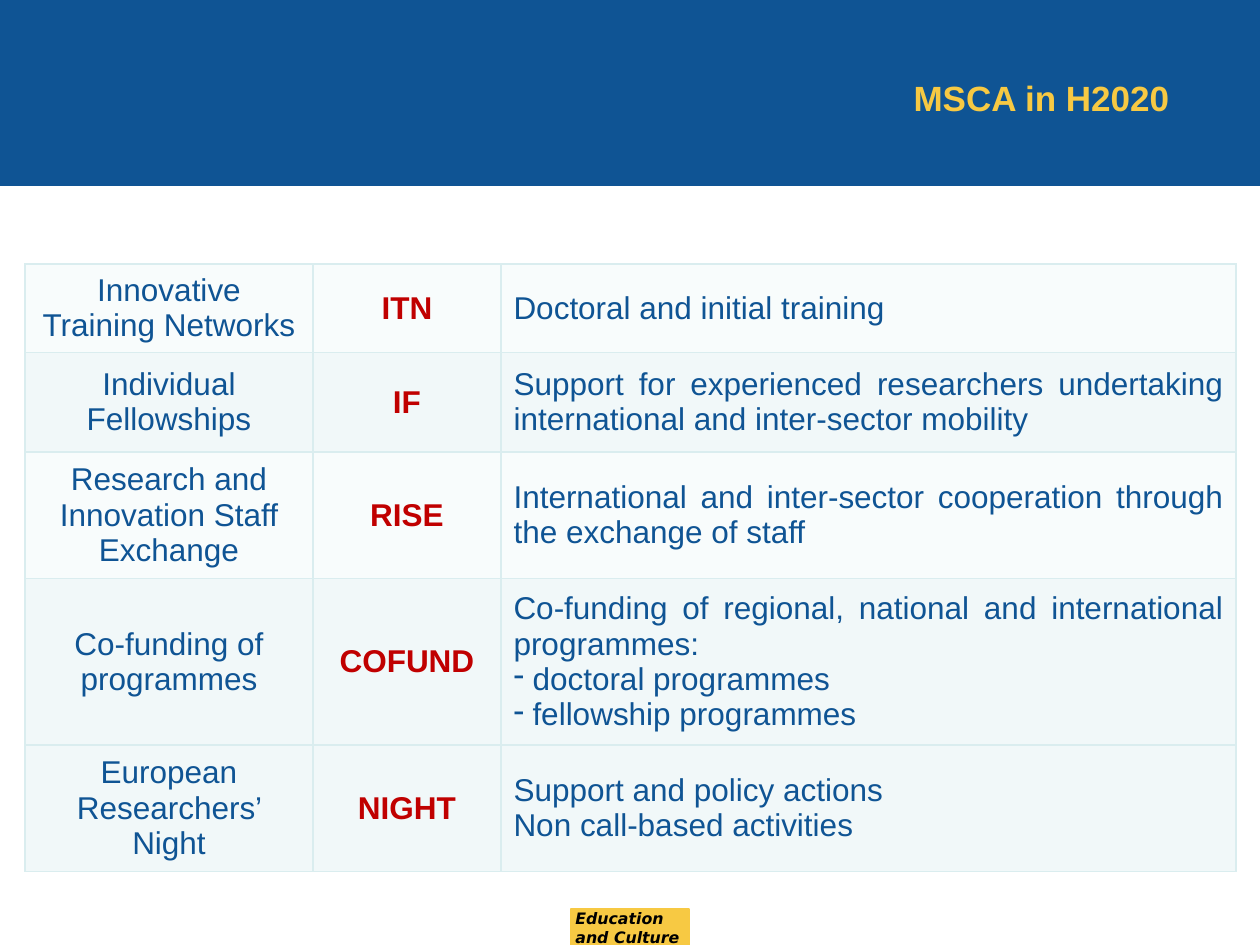
from lxml.etree import SubElement
from pptx import Presentation
from pptx.dml.color import RGBColor
from pptx.enum.shapes import MSO_SHAPE as Shape
from pptx.enum.text import MSO_ANCHOR as Anchor, MSO_AUTO_SIZE as AutoSize, PP_ALIGN as Align
from pptx.oxml.ns import qn
from pptx.util import Pt

PX = 914400 // 126
BLUE = RGBColor(0x0F, 0x54, 0x94)
YELLOW = RGBColor(0xF7, 0xC9, 0x43)
RED = RGBColor(0xC0, 0x00, 0x00)
BLACK = RGBColor(0x00, 0x00, 0x00)
BORDER = RGBColor(0xDA, 0xED, 0xEF)
PALE = RGBColor(0xF8, 0xFC, 0xFC)
TINT = RGBColor(0xF1, 0xF8, 0xF9)
DASH_INDENT = 19


def write(frame, text, size=18, color=BLUE, bold=False, italic=False, font="Arial", align=Align.LEFT):
    frame.word_wrap = True
    for number, line in enumerate(text.split("\n")):
        paragraph = frame.paragraphs[0] if number == 0 else frame.add_paragraph()
        paragraph.alignment = align
        if line.startswith("- "):
            properties = paragraph._p.get_or_add_pPr()
            properties.set("marL", str(DASH_INDENT * PX))
            properties.set("indent", str(-DASH_INDENT * PX))
            SubElement(properties, qn("a:buChar"), char="-")
        paragraph.text = line.removeprefix("- ")
        for run in paragraph.runs:
            run.font.name = font
            run.font.size = Pt(size)
            run.font.bold = bold
            run.font.italic = italic
            run.font.color.rgb = color


def add_borders(cell):
    properties = cell._tc.get_or_add_tcPr()
    for side in ("lnL", "lnR", "lnT", "lnB"):
        edge = SubElement(properties, qn(f"a:{side}"), w=str(Pt(1)))
        SubElement(SubElement(edge, qn("a:solidFill")), qn("a:srgbClr"), val=str(BORDER))


prs = Presentation()
prs.slide_width = 1260 * PX
prs.slide_height = 945 * PX
slide = prs.slides.add_slide(prs.slide_layouts[5])
shapes = slide.shapes

for left, top, width, height, color in [(571, 909, 118, 36, YELLOW), (0, 0, 1260, 185, BLUE)]:
    panel = shapes.add_shape(Shape.RECTANGLE, left * PX, top * PX, width * PX, height * PX)
    panel.shadow.inherit = False
    panel.fill.solid()
    panel.fill.fore_color.rgb = color
    panel.line.color.rgb = color
    panel.line.width = Pt(0.75)

department = shapes.add_textbox(563 * PX, 903 * PX, 260 * PX, 50 * PX)
department.text_frame.vertical_anchor = Anchor.MIDDLE
write(department.text_frame, "Education\vand Culture", size=9, color=BLACK,
      bold=True, italic=True, font="DejaVu Sans")

actions = [
    ("Innovative Training Networks", "ITN", "Doctoral and initial training", 88, PALE),
    ("Individual Fellowships", "IF",
     "Support for experienced researchers undertaking international and inter-sector mobility", 100, TINT),
    ("Research and Innovation Staff Exchange", "RISE",
     "International and inter-sector cooperation through the exchange of staff", 119, PALE),
    ("Co-funding of programmes", "COFUND",
     "Co-funding of regional, national and international programmes:\n"
     "- doctoral programmes\n- fellowship programmes", 167, TINT),
    ("European Researchers’ Night", "NIGHT",
     "Support and policy actions\nNon call-based activities", 119, TINT),
]
column_widths = [288, 188, 735]
column_formats = [
    dict(align=Align.CENTER),
    dict(align=Align.CENTER, color=RED, bold=True),
    dict(align=Align.JUSTIFY),
]
total_height = sum(action[3] for action in actions)
programme = shapes.add_table(len(actions), len(column_widths), 25 * PX, 264 * PX,
                             sum(column_widths) * PX, total_height * PX).table
programme.first_row = False
programme.horz_banding = False
for column, width in zip(programme.columns, column_widths):
    column.width = width * PX
for row, (*texts, height, shade) in zip(programme.rows, actions):
    row.height = height * PX
    for cell, text, text_format in zip(row.cells, texts, column_formats):
        add_borders(cell)
        cell.fill.solid()
        cell.fill.fore_color.rgb = shade
        cell.vertical_anchor = Anchor.MIDDLE
        write(cell.text_frame, text, **text_format)

title = shapes.title
title.left, title.top, title.width, title.height = 838 * PX, 70 * PX, 407 * PX, 55 * PX
title.text_frame.auto_size = AutoSize.NONE
title.text_frame.vertical_anchor = Anchor.MIDDLE
write(title.text_frame, "MSCA in H2020", size=20, color=YELLOW, bold=True, align=Align.CENTER)
shapes._spTree.append(title._element)

prs.save("out.pptx")
